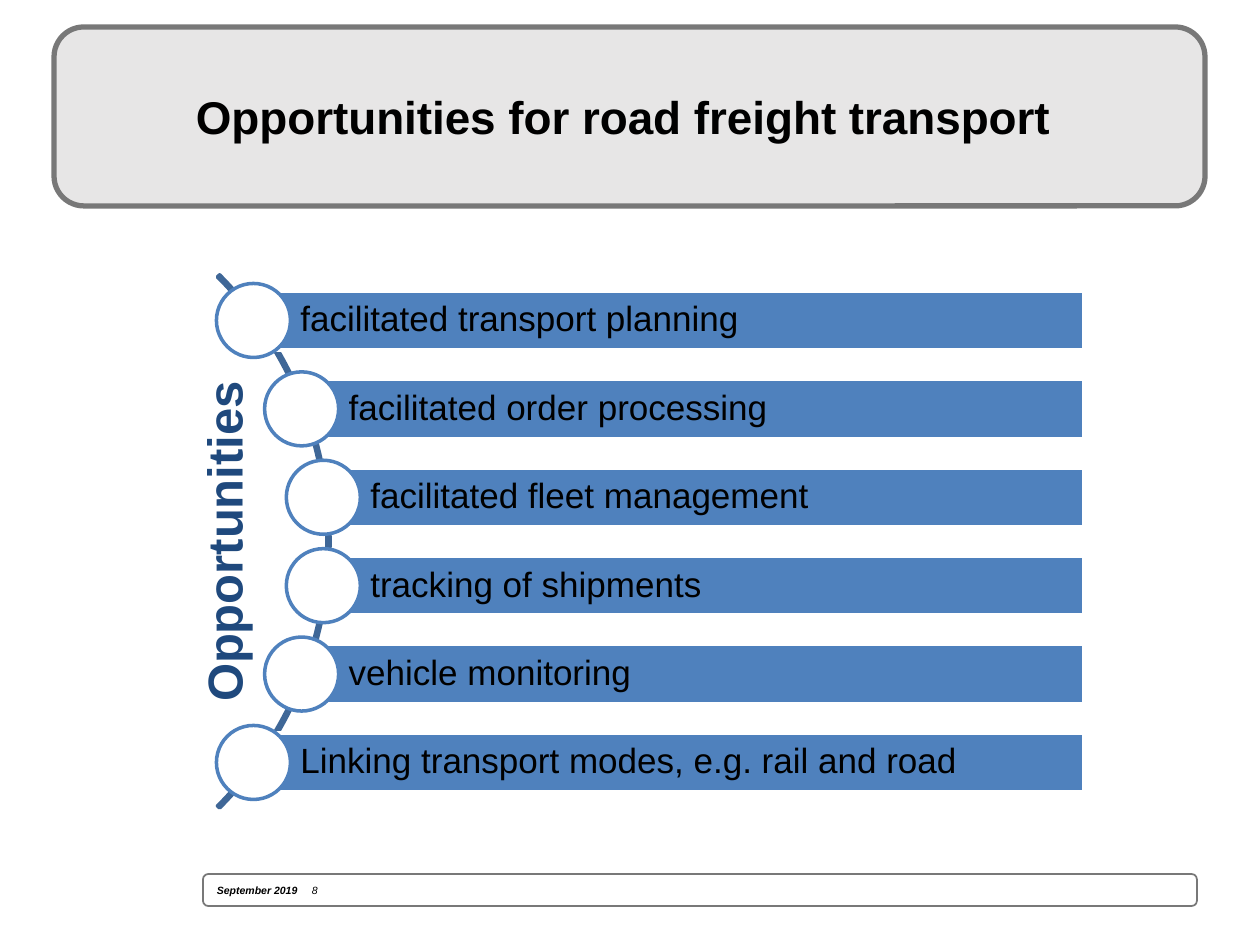
from math import sqrt

from lxml import etree
from pptx import Presentation
from pptx.dml.color import RGBColor
from pptx.enum.shapes import MSO_SHAPE
from pptx.enum.text import MSO_ANCHOR, MSO_AUTO_SIZE, PP_ALIGN
from pptx.oxml.ns import qn
from pptx.util import Pt

ROUND_RECT = MSO_SHAPE.ROUNDED_RECTANGLE
RECT = MSO_SHAPE.RECTANGLE
OVAL = MSO_SHAPE.OVAL
BLOCK_ARC = MSO_SHAPE.BLOCK_ARC
MIDDLE = MSO_ANCHOR.MIDDLE
NO_AUTOFIT = MSO_AUTO_SIZE.NONE
LEFT = PP_ALIGN.LEFT
CENTER = PP_ALIGN.CENTER

BLACK = RGBColor(0x00, 0x00, 0x00)
WHITE = RGBColor(0xFF, 0xFF, 0xFF)
PANEL = RGBColor(0xE7, 0xE6, 0xE6)
GRAY = RGBColor(0x78, 0x78, 0x78)
BLUE = RGBColor(0x4F, 0x81, 0xBD)
ARC_BLUE = RGBColor(0x3F, 0x67, 0x97)
NAVY = RGBColor(0x1F, 0x49, 0x7D)

FONT = "Arial"
EMU_PER_PX = 914400 / 126

ITEMS = [
    "facilitated transport planning",
    "facilitated order processing",
    "facilitated fleet management",
    "tracking of shipments",
    "vehicle monitoring",
    "Linking transport modes, e.g. rail and road",
]


def px(n):
    return round(n * EMU_PER_PX)


def place(sp, x, y, w, h):
    sp.left, sp.top, sp.width, sp.height = px(x), px(y), px(w), px(h)


def add_box(slide, kind, box, fill, line, width):
    sp = slide.shapes.add_shape(kind, *map(px, box))
    sp.shadow.inherit = False
    if fill is None:
        sp.fill.background()
    else:
        sp.fill.solid()
        sp.fill.fore_color.rgb = fill
    sp.line.color.rgb = line
    sp.line.width = Pt(width)
    return sp


def style(p, size, color=BLACK, align=LEFT, bold=None):
    p.alignment = align
    p.font.name = FONT
    p.font.size = Pt(size)
    p.font.color.rgb = color
    p.font.bold = bold


def add_header(slide, x, y, w, h, text):
    panel = add_box(slide, ROUND_RECT, (x, y, w, h), PANEL, GRAY, 3)
    title = slide.shapes.title
    title._element.addprevious(panel._element)
    place(title, x + 20, y + 10, w - 40, h - 21)
    tf = title.text_frame
    tf.text = text
    tf.word_wrap = True
    tf.auto_size = NO_AUTOFIT
    tf.vertical_anchor = MIDDLE
    style(tf.paragraphs[0], 26.2, align=CENTER, bold=True)


def add_footer(slide, x, y, w, h, date, number):
    sp = add_box(slide, ROUND_RECT, (x, y, w, h), WHITE, GRAY, 1)
    tf = sp.text_frame
    tf.vertical_anchor = MIDDLE
    p = tf.paragraphs[0]
    tabs = etree.SubElement(p._p.get_or_add_pPr(), qn("a:tabLst"))
    etree.SubElement(tabs, qn("a:tab"), pos=str(px(95)), algn="l")
    style(p, 6)
    p.font.italic = True
    for text, bold in ((date + "\t", True), (number, False)):
        r = p.add_run()
        r.text = text
        r.font.bold = bold


def add_item(slide, x, y, w, h, text):
    bar = add_box(slide, RECT, (x, y, w, h), BLUE, WHITE, 2)
    tf = bar.text_frame
    tf.word_wrap = True
    tf.vertical_anchor = MIDDLE
    tf.margin_left = px(47)
    tf.margin_right = tf.margin_top = tf.margin_bottom = px(8)
    tf.text = text
    p = tf.paragraphs[0]
    p.line_spacing = 0.9
    style(p, 20)
    d = 74
    add_box(slide, OVAL, (x - d / 2, y + (h - d) / 2, d, d), WHITE, BLUE, 2)


def add_caption(slide, cx, cy, w, h, text):
    sp = slide.shapes.add_textbox(*map(px, (cx - w / 2, cy - h / 2, w, h)))
    sp.rotation = 270
    tf = sp.text_frame
    tf.word_wrap = True
    tf.vertical_anchor = MIDDLE
    tf.text = text
    style(tf.paragraphs[0], 28, NAVY, CENTER, True)


def add_curved_list(slide, x, y, w, h, caption, items):
    cx, cy = x - 264, y + h / 2
    outer, orbit, bar_h = 377, 373, 59
    arc_box = (cx - outer, cy - outer, 2 * outer, 2 * outer)
    arc = add_box(slide, BLOCK_ARC, arc_box, None, ARC_BLUE, 2)
    for i, value in enumerate((189, 27, 0.004)):
        arc.adjustments[i] = value

    pitch = (h - bar_h) / (len(items) - 1)
    for i, text in enumerate(items):
        top = y + i * pitch
        dy = top + bar_h / 2 - cy
        left = cx + sqrt(orbit ** 2 - dy ** 2)
        add_item(slide, left, top, x + w - left, bar_h, text)
    add_caption(slide, x + 6, cy, 365, 72, caption)


def main():
    prs = Presentation()
    prs.slide_width, prs.slide_height = px(1260), px(945)
    slide = prs.slides.add_slide(prs.slide_layouts[5])
    add_footer(slide, 203, 874, 994, 32, "September 2019", "8")
    add_header(slide, 54, 27, 1151, 179,
               "Opportunities for road freight transport ")
    add_curved_list(slide, 217, 291, 867, 501, "Opportunities", ITEMS)
    prs.save("out.pptx")


if __name__ == "__main__":
    main()
